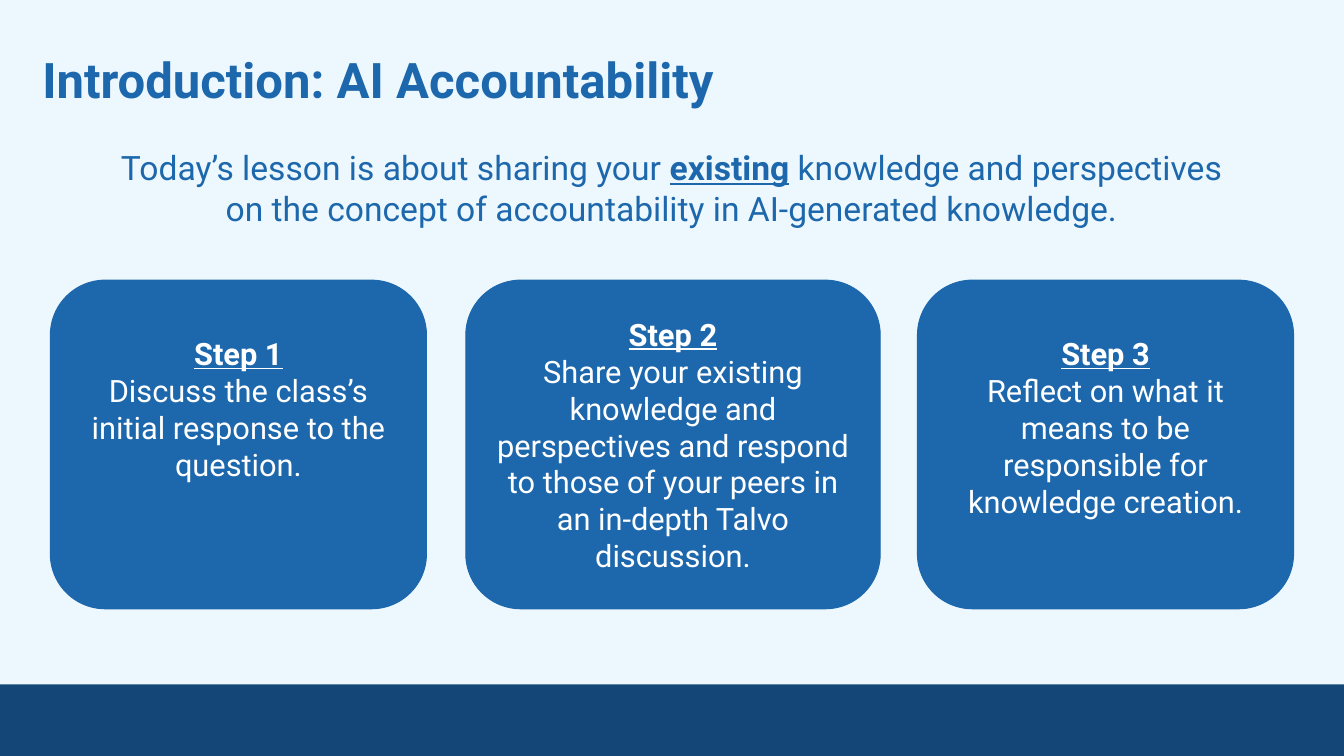
from dataclasses import dataclass

from pptx import Presentation
from pptx.dml.color import RGBColor
from pptx.enum import shapes, text
from pptx.util import Inches, Pt


@dataclass(frozen=True)
class Theme:
    """Colours, font and type sizes of the slide."""
    background: str = "ECF8FE"
    blue: str = "1D67AC"
    navy: str = "144777"
    white: str = "FFFFFF"
    font: str = "Roboto"
    title: int = 35
    intro: int = 24
    step: int = 22


THEME = Theme()


def style_run(run, size, color, bold=False, underline=False):
    """Give a run its font, size, colour and emphasis."""
    run.font.name = THEME.font
    run.font.size = Pt(size)
    run.font.color.rgb = RGBColor.from_string(color)
    run.font.bold = bold
    run.font.underline = underline


def prepare_frame(frame, inset, anchor=text.MSO_ANCHOR.TOP, top=None):
    """Wrap the text and set its margins and anchor."""
    frame.word_wrap = True
    frame.vertical_anchor = anchor
    frame.margin_left = frame.margin_right = frame.margin_bottom = Inches(inset)
    frame.margin_top = Inches(inset if top is None else top)


def add_panel(slide, preset, left, top, width, height, color):
    """Add a flat filled shape with a matching outline."""
    panel = slide.shapes.add_shape(
        preset, Inches(left), Inches(top), Inches(width), Inches(height))
    panel.shadow.inherit = False
    panel.fill.solid()
    panel.fill.fore_color.rgb = RGBColor.from_string(color)
    panel.line.color.rgb = RGBColor.from_string(color)
    panel.line.width = Pt(0.75)
    return panel


def add_title(slide, wording):
    """Add the slide heading."""
    title = slide.shapes.add_textbox(
        Inches(0.29), Inches(0.35), Inches(12.19), Inches(0.86))
    prepare_frame(title.text_frame, 0.13, text.MSO_ANCHOR.MIDDLE)
    title.text_frame.text = wording
    style_run(title.text_frame.paragraphs[0].runs[0], THEME.title, THEME.blue, bold=True)


def add_intro(slide, before, stressed, after):
    """Add the centred introduction with one stressed word."""
    intro = slide.shapes.add_textbox(
        Inches(0.91), Inches(1.36), Inches(11.5), Inches(1.82))
    prepare_frame(intro.text_frame, 0.1)
    sentence = intro.text_frame.paragraphs[0]
    sentence.alignment = text.PP_ALIGN.CENTER
    for part in (before, stressed, after):
        run = sentence.add_run()
        run.text = part
        emphasis = part == stressed
        style_run(run, THEME.intro, THEME.blue, emphasis, emphasis)


def add_step(slide, left, width, top_inset, heading, task):
    """Add one rounded step card with its heading and task."""
    card = add_panel(slide, shapes.MSO_SHAPE.ROUNDED_RECTANGLE,
                     left, 2.78, width, 3.26, THEME.blue)
    card.adjustments[0] = 0.167
    prepare_frame(card.text_frame, 0.1, top=top_inset)
    card.text_frame.text = f"{heading}\n{task}"
    for paragraph in card.text_frame.paragraphs:
        paragraph.alignment = text.PP_ALIGN.CENTER
        emphasis = paragraph.text == heading
        style_run(paragraph.runs[0], THEME.step, THEME.white, emphasis, emphasis)


def main():
    """Build the slide and save it."""
    deck = Presentation()
    deck.slide_width, deck.slide_height = Inches(13.33), Inches(7.5)
    slide = deck.slides.add_slide(deck.slide_layouts[6])
    slide.background.fill.solid()
    slide.background.fill.fore_color.rgb = RGBColor.from_string(THEME.background)

    footer = add_panel(slide, shapes.MSO_SHAPE.RECTANGLE, 0, 6.79, 13.33, 0.71, THEME.navy)
    footer.line.fill.background()
    add_title(slide, "Introduction: AI Accountability")
    add_intro(slide, "Today’s lesson is about sharing your ", "existing",
              " knowledge and perspectives on the concept of accountability"
              " in AI-generated knowledge.")

    steps = (
        (0.5, 3.73, 0.38, "Discuss the class’s initial response to the question."),
        (4.62, 4.11, 0.19, "Share your existing knowledge and perspectives and respond"
                           " to those of your peers in an in-depth Talvo discussion."),
        (9.1, 3.73, 0.38, "Reflect on what it means to be responsible for"
                          " knowledge creation."),
    )
    for number, (left, width, top_inset, task) in enumerate(steps, start=1):
        add_step(slide, left, width, top_inset, f"Step {number}", task)
    deck.save("out.pptx")


if __name__ == "__main__":
    main()
